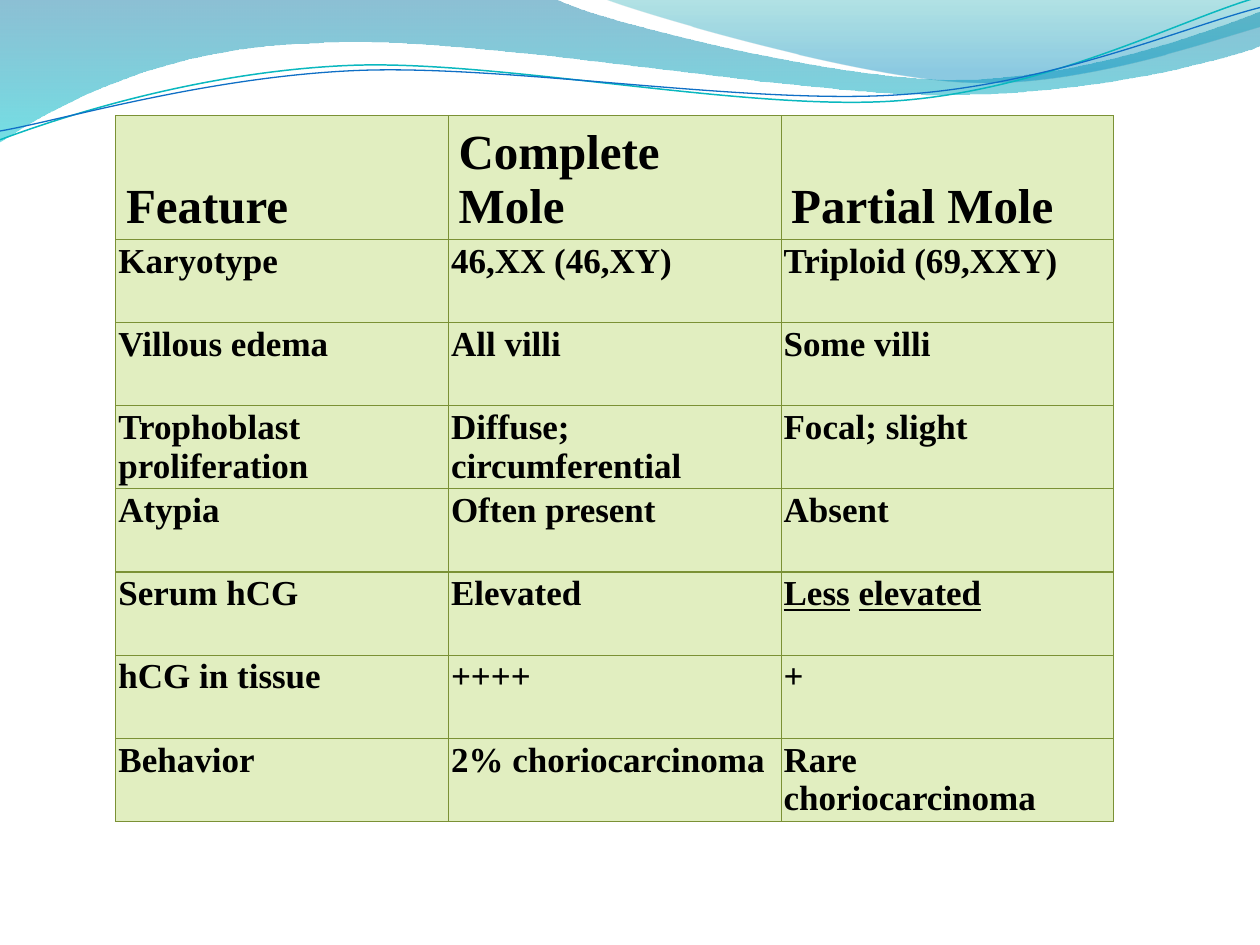
import pptx
import pptx.util
from lxml import etree
from pptx.dml.color import RGBColor
from pptx.enum.text import MSO_ANCHOR
from pptx.oxml.ns import qn
from pptx.util import Inches, Pt

FONT = "Times New Roman"
BLACK = RGBColor(0x00, 0x00, 0x00)
CELL_GREEN = RGBColor(0xE1, 0xEE, 0xC0)
BORDER_GREEN = RGBColor(0x7B, 0x91, 0x35)
DEEP_BLUE = RGBColor(0x00, 0x74, 0xA1)
CYAN = RGBColor(0x00, 0xC6, 0xCF)
TEAL = RGBColor(0x00, 0xA1, 0xA9)
SKY_BLUE = RGBColor(0x00, 0x8B, 0xBF)
LINE_TEAL = RGBColor(0x0A, 0xB8, 0xBF)
LINE_BLUE = RGBColor(0x0F, 0x6F, 0xC6)

HEADINGS = ["Feature", "Complete Mole", "Partial Mole"]
# A tuple holds the underlined words of a cell.
FEATURES = [
    ["Karyotype", "46,XX (46,XY)", "Triploid (69,XXY)"],
    ["Villous edema", "All villi", "Some villi"],
    ["Trophoblast proliferation", "Diffuse; circumferential", "Focal; slight"],
    ["Atypia", "Often present", "Absent"],
    ["Serum hCG", "Elevated", ("Less", "elevated")],
    ["hCG in tissue", "++++", "+"],
    ["Behavior", "2% choriocarcinoma", "Rare choriocarcinoma"],
]
TABLE_LEFT, TABLE_TOP = 0.92, 0.92
COLUMN_WIDTH, HEADING_HEIGHT, ROW_HEIGHT = 2.64, 0.98, 0.66

# Outlines in inches: a pair is a corner, six numbers are a Bezier curve.
# Gradient stops are (position, colour, opacity in percent).
WAVES = [
    ([(0, 0), (4.4, -0.01),
      (4.76, 0.17, 6.64, 0.63, 7.58, 0.63), (8.53, 0.63, 9.58, 0.26, 10, 0.09),
      (10.01, 0.36),
      (9.83, 0.44, 8.7, 0.76, 7.46, 0.75), (6.22, 0.75, 3.82, 0.28, 2.57, 0.34),
      (1.29, 0.36, 0.46, 0.83, -0.01, 1.13)],
     [(0, DEEP_BLUE, 45), (1, CYAN, 55)]),
    ([(4.79, -0.01),
      (5.09, 0.11, 6.82, 0.62, 7.69, 0.65), (8.56, 0.69, 9.61, 0.32, 10, 0.21),
      (10, 0)],
     [(0, TEAL, 30), (0.8, SKY_BLUE, 45)]),
]
SWEEPS = [
    ([(0, 1.11), (0.48, 0.93, 1.58, 0.57, 2.77, 0.52),
      (3.95, 0.47, 5.93, 0.89, 7.13, 0.8), (8.33, 0.71, 9.38, 0.15, 9.98, -0.02)],
     LINE_TEAL, 0.85),
    ([(0, 1.04), (0.47, 0.96, 1.64, 0.61, 2.83, 0.56),
      (4.03, 0.51, 5.97, 0.84, 7.17, 0.75), (8.36, 0.67, 9.41, 0.21, 10, 0.06)],
     LINE_BLUE, 0.75),
]


def add_outline(slide, outline, close):
    """Build the outline through all its points, then bend the curved parts."""
    points = [(Inches(part[i]), Inches(part[i + 1]))
              for part in outline for i in range(0, len(part), 2)]
    builder = slide.shapes.build_freeform(*points[0])
    builder.add_line_segments(points[1:], close=close)
    shape = builder.convert_to_shape()
    shape.shadow.inherit = False
    segments = iter(list(shape.element.spPr.iter(qn("a:lnTo"))))
    for part in outline[1:]:
        segment = next(segments)
        if len(part) == 6:
            curve = etree.Element(qn("a:cubicBezTo"))
            segment.addprevious(curve)
            for straight in (segment, next(segments), next(segments)):
                curve.append(straight[0])
                straight.getparent().remove(straight)
    return shape


def add_wave(slide, outline, stops):
    wave = add_outline(slide, outline, close=True)
    wave.line.fill.background()
    wave.fill.gradient()
    wave.fill.gradient_angle = 270
    for stop, (position, color, _) in zip(wave.fill.gradient_stops, stops):
        stop.position = position
        stop.color.rgb = color
    colors = wave.element.spPr.iter(qn("a:srgbClr"))
    for color, (_, _, opacity) in zip(list(colors), stops):
        etree.SubElement(color, qn("a:alpha"), val=str(opacity * 1000))


def add_sweep(slide, outline, color, width):
    sweep = add_outline(slide, outline, close=False)
    sweep.fill.background()
    sweep.line.color.rgb = color
    sweep.line.width = Pt(width)


def add_borders(cell):
    properties = cell._tc.get_or_add_tcPr()
    for side in ("lnL", "lnR", "lnT", "lnB"):
        border = etree.SubElement(properties, qn("a:" + side), w=str(Pt(0.75)))
        fill = etree.SubElement(border, qn("a:solidFill"))
        etree.SubElement(fill, qn("a:srgbClr"), val=str(BORDER_GREEN))


def split_runs(content):
    """Give (text, underlined) pairs, with plain spaces between underlined words."""
    if isinstance(content, str):
        return [(content, False)]
    runs = []
    for word in content:
        if runs:
            runs.append((" ", False))
        runs.append((word, True))
    return runs


def fill_cell(cell, content, is_heading):
    add_borders(cell)
    cell.fill.solid()
    cell.fill.fore_color.rgb = CELL_GREEN
    cell.margin_left = cell.margin_right = Inches(0.08 if is_heading else 0.02)
    cell.margin_top = cell.margin_bottom = Inches(0.04 if is_heading else 0.02)
    cell.vertical_anchor = MSO_ANCHOR.BOTTOM if is_heading else MSO_ANCHOR.TOP
    paragraph = cell.text_frame.paragraphs[0]
    for text, underlined in split_runs(content):
        run = paragraph.add_run()
        run.text = text
        run.font.name = FONT
        run.font.size = Pt(28 if is_heading else 20)
        run.font.bold = True
        run.font.underline = underlined
        run.font.color.rgb = BLACK


def add_comparison(slide):
    rows = [HEADINGS] + FEATURES
    heights = [HEADING_HEIGHT] + [ROW_HEIGHT] * len(FEATURES)
    comparison = slide.shapes.add_table(
        len(rows), len(HEADINGS), Inches(TABLE_LEFT), Inches(TABLE_TOP),
        Inches(COLUMN_WIDTH * len(HEADINGS)), Inches(sum(heights))).table
    comparison.first_row = comparison.horz_banding = False
    for column in comparison.columns:
        column.width = Inches(COLUMN_WIDTH)
    for r, (contents, height) in enumerate(zip(rows, heights)):
        comparison.rows[r].height = Inches(height)
        for c, content in enumerate(contents):
            fill_cell(comparison.cell(r, c), content, is_heading=r == 0)


def main():
    deck = pptx.Presentation()
    deck.slide_width, deck.slide_height = Inches(10), Inches(7.5)
    slide = deck.slides.add_slide(deck.slide_layouts[6])
    for outline, stops in WAVES:
        add_wave(slide, outline, stops)
    for outline, color, width in SWEEPS:
        add_sweep(slide, outline, color, width)
    add_comparison(slide)
    deck.save("out.pptx")


if __name__ == "__main__":
    main()
